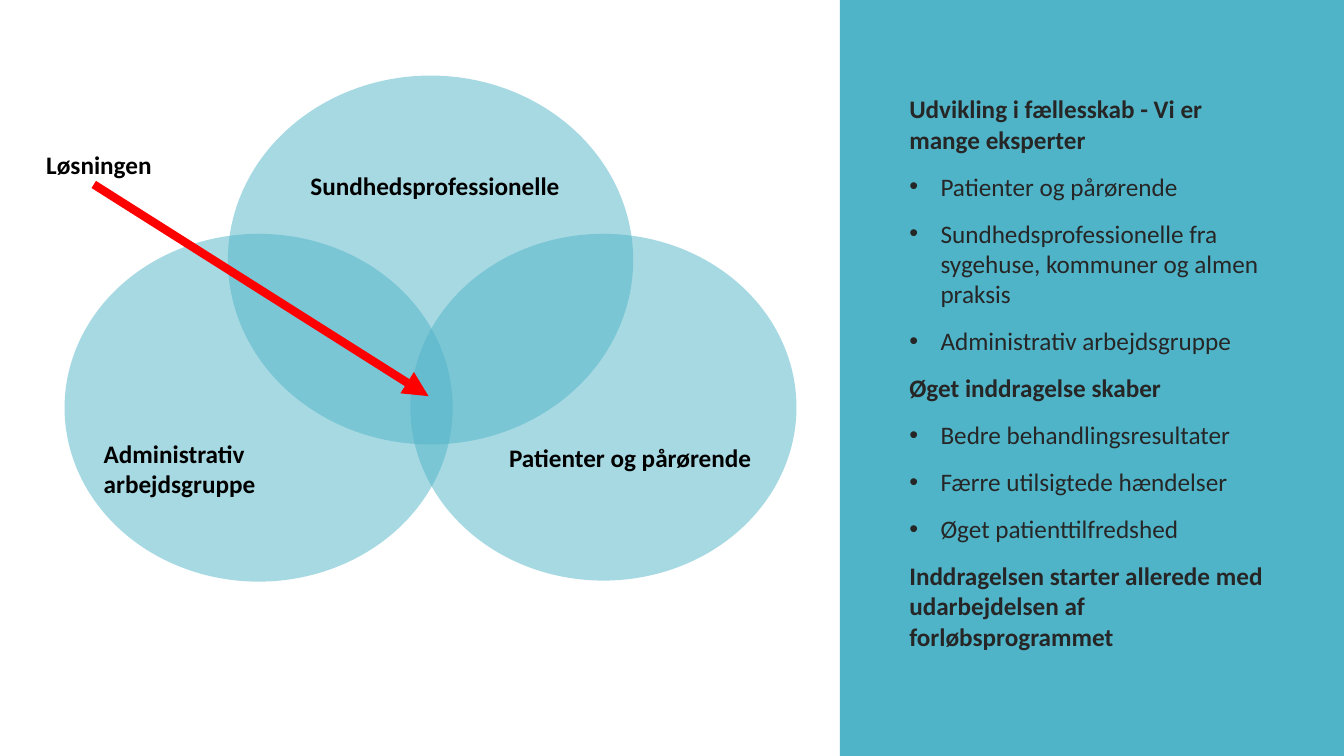
from dataclasses import dataclass
from lxml.etree import SubElement
from pptx import Presentation
from pptx.dml.color import RGBColor
from pptx.enum.shapes import MSO_CONNECTOR as Line, MSO_SHAPE as Shape
from pptx.enum.text import MSO_ANCHOR as Anchor, PP_ALIGN as Align
from pptx.oxml.ns import qn
from pptx.util import Inches, Pt

# Content: headings with their bullet points
POINTS = [
    ("Udvikling i fællesskab - Vi er mange eksperter", [
        "Patienter og pårørende",
        "Sundhedsprofessionelle fra sygehuse, kommuner og almen praksis",
        "Administrativ arbejdsgruppe"]),
    ("Øget inddragelse skaber", [
        "Bedre behandlingsresultater",
        "Færre utilsigtede hændelser",
        "Øget patienttilfredshed"]),
    ("Inddragelsen starter allerede med udarbejdelsen af forløbsprogrammet", []),
]

# Lengths in inches: left, top, width, height
CIRCLES = [(2.26, 0.75, 4.02, 3.66), (4.07, 2.32, 3.83, 3.44), (0.64, 2.32, 3.85, 3.45)]
# Text, left, top, width
LABELS = [
    ("Sundhedsprofessionelle", 2.98, 1.64, 2.98),
    ("Administrativ arbejdsgruppe", 0.93, 4.3, 3.12),
    ("Patienter og pårørende", 4.95, 4.34, 3.52),
    ("Løsningen", 0.36, 1.43, 2.3),
]
ARROW = (0.93, 1.83, 4.25, 3.93)
BODY = (8.92, 0.88, 3.85, 5.8)
WIDE, HIGH = 13.33, 7.5
SPLIT = WIDE * 5 / 8
ROW = 0.4
INDENT = 0.31


@dataclass(frozen=True)
class Theme:
    teal: RGBColor = RGBColor(0x50, 0xB4, 0xC8)
    red: RGBColor = RGBColor(0xFF, 0, 0)
    ink: RGBColor = RGBColor(0x26, 0x26, 0x26)
    black: RGBColor = RGBColor(0, 0, 0)
    font: str = "Calibri"
    size: int = 18
    gap: int = 12
    stroke: int = 6


THEME = Theme()


def inches(vals):
    return [Inches(val) for val in vals]


def add_fill(shapes, kind, box):
    shape = shapes.add_shape(kind, *inches(box))
    shape.shadow.inherit = False
    shape.fill.solid()
    shape.fill.fore_color.rgb = THEME.teal
    shape.line.fill.background()
    return shape


def add_frame(shapes, box):
    frame = shapes.add_textbox(*inches(box)).text_frame
    frame.word_wrap = True
    frame.vertical_anchor = Anchor.TOP
    return frame


def set_text(para, text, color, bold=True):
    para.text = text
    para.alignment = Align.LEFT
    font = para.font
    font.name, font.size, font.bold = THEME.font, Pt(THEME.size), bold
    font.color.rgb = color


def add_bullet(para):
    props = para._p.get_or_add_pPr()
    props.set("marL", str(Inches(INDENT)))
    props.set("indent", str(-Inches(INDENT)))
    font = SubElement(props, qn("a:buFont"), typeface="Arial")
    font.addnext(props.makeelement(qn("a:buChar"), {"char": "•"}))
    # Bullet tags come before the default run style
    style = props.find(qn("a:defRPr"))
    if style is not None:
        props.append(style)


def add_points(shapes):
    frame = add_frame(shapes, BODY)
    rows = [row for head, items in POINTS
            for row in [(head, True)] + [(item, False) for item in items]]
    for num, (text, bold) in enumerate(rows):
        para = frame.add_paragraph() if num else frame.paragraphs[0]
        set_text(para, text, THEME.ink, bold)
        para.space_before = Pt(THEME.gap)
        if not bold:
            add_bullet(para)


def add_circles(shapes):
    group = shapes.add_group_shape()
    for box in CIRCLES:
        shape = add_fill(group.shapes, Shape.OVAL, box)
        color = shape.fill._xPr.find(".//" + qn("a:srgbClr"))
        SubElement(color, qn("a:alpha"), val="50000")


def add_label(shapes, text, left, top, width):
    frame = add_frame(shapes, (left, top, width, ROW))
    set_text(frame.paragraphs[0], text, THEME.black)


def add_arrow(shapes):
    arrow = shapes.add_connector(Line.STRAIGHT, *inches(ARROW))
    arrow.line.color.rgb = THEME.red
    arrow.line.width = Pt(THEME.stroke)
    SubElement(arrow.line._get_or_add_ln(), qn("a:tailEnd"), type="triangle")
    SubElement(arrow._element.spPr, qn("a:effectLst"))


def main():
    deck = Presentation()
    deck.slide_width, deck.slide_height = inches((WIDE, HIGH))
    shapes = deck.slides.add_slide(deck.slide_layouts[6]).shapes

    # Side panel
    add_fill(shapes, Shape.RECTANGLE, (SPLIT, 0, WIDE - SPLIT, HIGH))
    add_points(shapes)

    # Overlapping circles, with the arrow below its label
    add_circles(shapes)
    *names, answer = LABELS
    for label in names:
        add_label(shapes, *label)
    add_arrow(shapes)
    add_label(shapes, *answer)

    deck.save("out.pptx")


if __name__ == "__main__":
    main()
